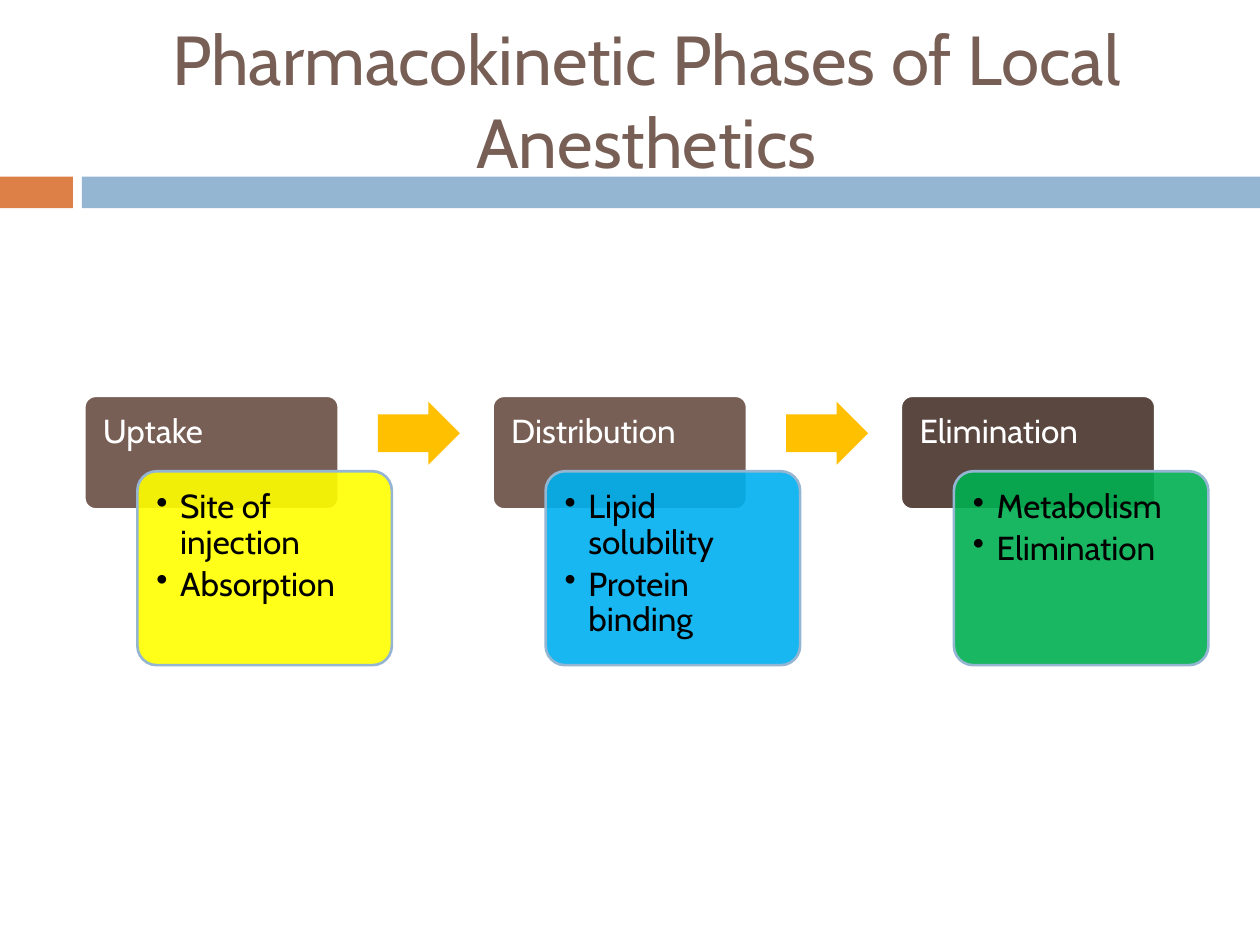
from lxml import etree
from pptx import Presentation
from pptx.dml.color import RGBColor
from pptx.enum import shapes, text
from pptx.oxml import ns
from pptx.util import Cm, Pt

FONT = "Cabin"
WHITE = RGBColor(0xFF, 0xFF, 0xFF)
BLACK = RGBColor(0, 0, 0)
BROWN = RGBColor(0x77, 0x5F, 0x55)
DARK = RGBColor(0x59, 0x47, 0x40)
ORANGE = RGBColor(0xDD, 0x80, 0x47)
BLUE = RGBColor(0x94, 0xB6, 0xD2)
GOLD = RGBColor(0xFF, 0xC0, 0x00)
YELLOW = RGBColor(0xFF, 0xFF, 0x00)
CYAN = RGBColor(0x00, 0xB0, 0xF0)
GREEN = RGBColor(0x00, 0xB0, 0x50)

PHASES = [
    ("Uptake", BROWN, YELLOW, ["Site of injection", "Absorption"]),
    ("Distribution", BROWN, CYAN, ["Lipid solubility", "Protein binding"]),
    ("Elimination", DARK, GREEN, ["Metabolism", "Elimination"]),
]
LEFT, STEP = 1.7, 8.23  # first phase and distance between phases, in cm
KIND = shapes.MSO_SHAPE


def block(slide, kind, box, fill, line=None, adjust=()):
    shape = slide.shapes.add_shape(kind, *[Cm(v) for v in box])
    shape.shadow.inherit = False
    shape.fill.solid()
    shape.fill.fore_color.rgb = fill
    if line is None:
        shape.line.fill.background()
    else:
        shape.line.color.rgb = line
        shape.line.width = Pt(1.5)
    for i, value in enumerate(adjust):
        shape.adjustments[i] = value
    return shape


def write(shape, lines, color, inset):
    frame = shape.text_frame
    frame.word_wrap = True
    frame.vertical_anchor = text.MSO_ANCHOR.TOP
    frame.margin_left = frame.margin_top = Cm(inset)
    frame.margin_right = frame.margin_bottom = Cm(inset)
    frame.text = "\n".join(lines)
    for para in frame.paragraphs:
        para.alignment = text.PP_ALIGN.LEFT
        para.line_spacing = 0.9
        para.space_after = Pt(3)
        para.font.name = FONT
        para.font.size = Pt(19)
        para.font.color.rgb = color
    return frame.paragraphs


def bullet(para):
    para.level = 1
    props = para._p.get_or_add_pPr()
    props.set("marL", str(Cm(0.48)))
    props.set("indent", str(-Cm(0.48)))
    mark = etree.Element(ns.qn("a:buChar"), char="•")
    props.find(ns.qn("a:defRPr")).addprevious(mark)


def fade(shape, percent):
    color = shape.fill._xPr.find(".//" + ns.qn("a:srgbClr"))
    etree.SubElement(color, ns.qn("a:alpha"), val=str(percent * 1000))


def title(slide, words):
    box = slide.shapes.add_textbox(Cm(LEFT), Cm(0.64), Cm(22.66), Cm(2.74))
    frame = box.text_frame
    frame.word_wrap = True
    frame.vertical_anchor = text.MSO_ANCHOR.MIDDLE
    frame.text = words
    para = frame.paragraphs[0]
    para.alignment = text.PP_ALIGN.CENTER
    para.font.name = FONT
    para.font.size = Pt(39.6)
    para.font.color.rgb = BROWN


def phase(slide, x, name, shade, fill, points):
    # Header, partly covered by the card
    head = block(slide, KIND.ROUNDED_RECTANGLE, (x, 7.98, 5.13, 2.29),
                 shade, WHITE, [0.1])
    write(head, [name], WHITE, 0.31)

    # Card with bullet points
    card = block(slide, KIND.ROUNDED_RECTANGLE, (x + 1.07, 9.5, 5.13, 3.91),
                 fill, BLUE, [0.1])
    fade(card, 90)
    for para in write(card, points, BLACK, 0.27):
        bullet(para)


def main():
    deck = Presentation()
    deck.slide_width, deck.slide_height = Cm(25.4), Cm(19.05)
    slide = deck.slides.add_slide(deck.slide_layouts[6])

    # Band and title
    block(slide, KIND.RECTANGLE, (0, 3.56, 1.47, 0.64), ORANGE)
    block(slide, KIND.RECTANGLE, (1.65, 3.56, 23.75, 0.64), BLUE)
    title(slide, "Pharmacokinetic Phases of Local Anesthetics")

    # Phases, with an arrow from each to the next
    for i, item in enumerate(PHASES):
        x = LEFT + i * STEP
        phase(slide, x, *item)
        if i < len(PHASES) - 1:
            block(slide, KIND.RIGHT_ARROW, (x + 5.92, 8.1, 1.65, 1.27),
                  GOLD, adjust=[0.6, 0.5])

    deck.save("out.pptx")


if __name__ == "__main__":
    main()
